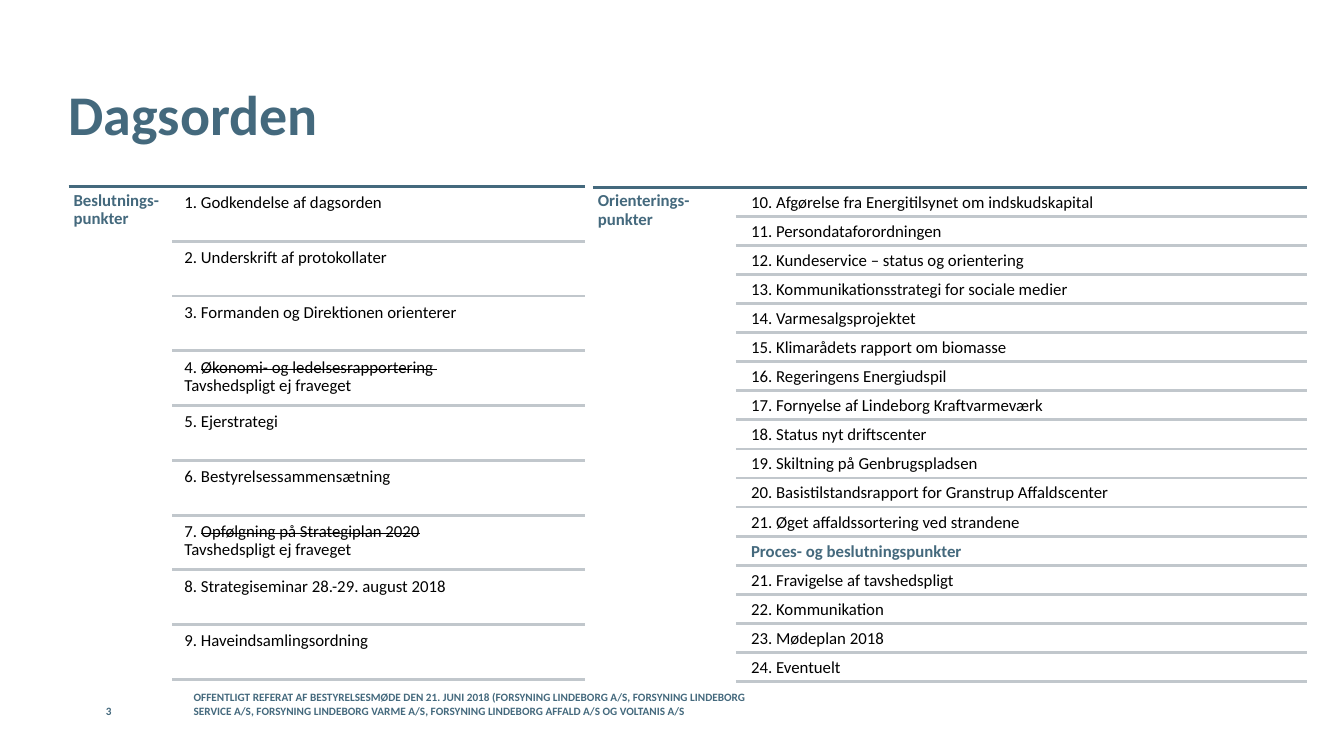
import dataclasses

import pptx
import pptx.dml.color
import pptx.enum.shapes
import pptx.enum.text
import pptx.oxml.ns
import pptx.util
from lxml import etree

ANCHOR = pptx.enum.text.MSO_ANCHOR
WIDTH = pptx.util.Inches(13.33)
HEIGHT = pptx.util.Inches(7.5)


@dataclasses.dataclass(frozen=True)
class Theme:
    font: str = "Calibri"
    accent: str = "44697D"
    ink: str = "000000"
    rule: str = "C1C7CC"
    title_size: int = 40
    body_size: int = 12
    footer_size: int = 8
    rule_width: int = 2
    inset: float = 3.6
    leading: float = 0.9


THEME = Theme()


@dataclasses.dataclass(frozen=True)
class Section:
    """An agenda column; lengths are percentages of the slide's size."""
    label: str
    items: tuple
    left: float
    rule_left: float
    text_left: float
    right: float
    top: float
    bottom: float
    headings: tuple = ()


DECISIONS = Section(
    "Beslutnings-punkter",
    (
        "1. Godkendelse af dagsorden",
        "2. Underskrift af protokollater",
        "3. Formanden og Direktionen orienterer",
        "4. ~Økonomi- og ledelsesrapportering ~\nTavshedspligt ej fraveget",
        "5. Ejerstrategi",
        "6. Bestyrelsessammensætning",
        "7. ~Opfølgning på Strategiplan 2020~\nTavshedspligt ej fraveget",
        "8. Strategiseminar 28.-29. august 2018",
        "9. Haveindsamlingsordning",
    ),
    left=5.1, rule_left=12.83, text_left=13.35, right=43.51, top=24.67, bottom=89.87,
)
BRIEFINGS = Section(
    "Orienterings-punkter",
    (
        "10. Afgørelse fra Energitilsynet om indskudskapital",
        "11. Persondataforordningen",
        "12. Kundeservice – status og orientering",
        "13. Kommunikationsstrategi for sociale medier",
        "14. Varmesalgsprojektet",
        "15. Klimarådets rapport om biomasse",
        "16. Regeringens Energiudspil",
        "17. Fornyelse af Lindeborg Kraftvarmeværk",
        "18. Status nyt driftscenter",
        "19. Skiltning på Genbrugspladsen",
        "20. Basistilstandsrapport for Granstrup Affaldscenter",
        "21. Øget affaldssortering ved strandene",
        "Proces- og beslutningspunkter",
        "21. Fravigelse af tavshedspligt",
        "22. Kommunikation",
        "23. Mødeplan 2018",
        "24. Eventuelt",
    ),
    left=44.11, rule_left=54.76, text_left=55.51, right=97.22, top=24.8, bottom=90.13,
    headings=("Proces- og beslutningspunkter",),
)
FOOTER = (
    "OFFENTLIGT REFERAT AF BESTYRELSESMØDE DEN 21. JUNI 2018 "
    "(FORSYNING LINDEBORG A/S, FORSYNING LINDEBORG SERVICE A/S, "
    "FORSYNING LINDEBORG VARME A/S, FORSYNING LINDEBORG AFFALD A/S OG VOLTANIS A/S"
)


def across(percent):
    return round(WIDTH * percent / 100)


def down(percent):
    return round(HEIGHT * percent / 100)


def rgb(color):
    return pptx.dml.color.RGBColor.from_string(color)


def write(shapes, text, area, size=THEME.body_size, color=THEME.accent, bold=True,
          anchor=ANCHOR.TOP, inset=0, leading=1.0):
    """Fill area (left, top, right, bottom) with text; words between tildes are struck out."""
    left, top, right, bottom = area
    box = shapes.add_textbox(across(left), down(top), across(right - left), down(bottom - top))
    frame = box.text_frame
    frame.word_wrap = True
    frame.vertical_anchor = anchor
    frame.margin_left = frame.margin_right = pptx.util.Pt(inset)
    frame.margin_top = frame.margin_bottom = pptx.util.Pt(inset)
    for number, line in enumerate(text.split("\n")):
        para = frame.add_paragraph() if number else frame.paragraphs[0]
        para.line_spacing = leading
        for index, part in enumerate(line.split("~")):
            if not part:
                continue
            span = para.add_run()
            span.text = part
            span.font.name = THEME.font
            span.font.size = pptx.util.Pt(size)
            span.font.bold = bold
            span.font.color.rgb = rgb(color)
            if index % 2:
                span.font._element.set("strike", "sngStrike")


def draw_rule(shapes, left, right, height, color):
    rule = shapes.add_connector(
        pptx.enum.shapes.MSO_CONNECTOR.STRAIGHT,
        across(left), down(height), across(right), down(height))
    rule.line.color.rgb = rgb(color)
    rule.line.width = pptx.util.Pt(THEME.rule_width)
    etree.SubElement(rule._element.spPr, pptx.oxml.ns.qn("a:effectLst"))


def draw_section(page, section):
    shapes = page.shapes.add_group_shape().shapes
    draw_rule(shapes, section.left, section.right, section.top, THEME.accent)
    body = {"inset": THEME.inset, "leading": THEME.leading}
    label_area = (section.left, section.top, section.rule_left, section.bottom)
    write(shapes, section.label, label_area, **body)
    pitch = (section.bottom - section.top) / len(section.items)
    for row, item in enumerate(section.items):
        row_top = section.top + row * pitch
        row_bottom = row_top + pitch
        heading = item in section.headings
        write(shapes, item, (section.text_left, row_top + pitch / 20, section.right, row_bottom),
              color=THEME.accent if heading else THEME.ink, bold=heading, **body)
        draw_rule(shapes, section.rule_left, section.right, row_bottom, THEME.rule)


def main():
    deck = pptx.Presentation()
    deck.slide_width, deck.slide_height = WIDTH, HEIGHT
    page = deck.slides.add_slide(deck.slide_layouts[6])
    write(page.shapes, "Dagsorden", (5.1, 5.33, 91.37, 24.67),
          size=THEME.title_size, anchor=ANCHOR.MIDDLE)
    for section in (DECISIONS, BRIEFINGS):
        draw_section(page, section)
    for text, left, right in ((FOOTER, 14.4, 56.94), ("3", 7.88, 12.98)):
        write(page.shapes, text, (left, 92.4, right, 94.93),
              size=THEME.footer_size, anchor=ANCHOR.BOTTOM)
    deck.save("out.pptx")


if __name__ == "__main__":
    main()
